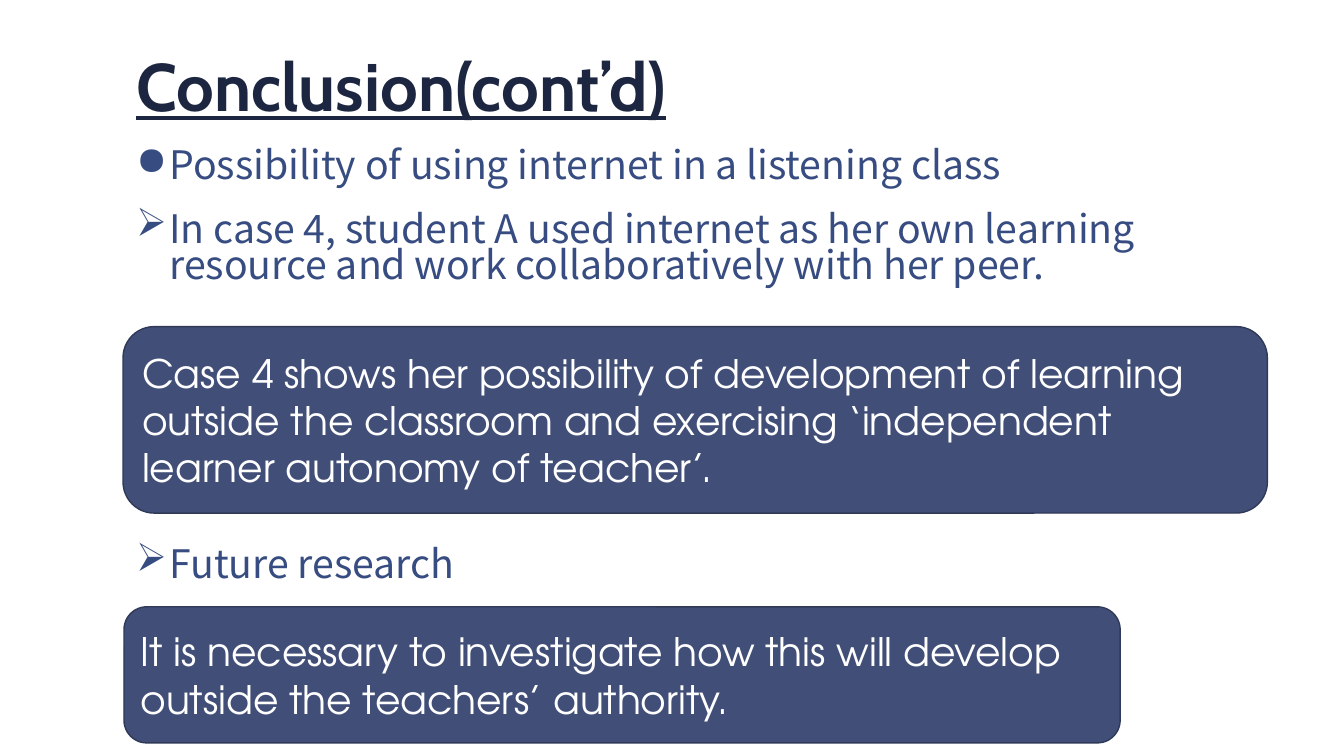
from lxml import etree
from pptx import Presentation
from pptx.dml.color import RGBColor
from pptx.enum import shapes, text
from pptx.oxml import ns
from pptx.util import Inches, Pt

COLORS = {"title": "1C2640", "body": "374C81", "panel": "414E77",
          "edge": "303A58", "white": "FFFFFF"}
TITLE_FONT, BODY_FONT, PANEL_FONT = "Cabin", "Noto Sans CJK JP", "TeX Gyre Adventor"
INDENT = Inches(0.33)


def color(name):
    return RGBColor.from_string(COLORS[name])


def write(par, words, face, tint, size=28, bold=False, under=False, lead=1.0, before=0):
    par.text = words
    par.alignment = text.PP_ALIGN.LEFT
    par.line_spacing = lead
    par.space_before = Pt(before)
    font = par.font
    font.name, font.size, font.bold, font.underline = face, Pt(size), bold, under
    font.color.rgb = color(tint)


def set_frame(frame, anchor):
    frame.word_wrap = True
    frame.auto_size = text.MSO_AUTO_SIZE.NONE
    frame.vertical_anchor = anchor
    frame.margin_left = frame.margin_right = Inches(0.13)
    frame.margin_top = frame.margin_bottom = Inches(0.07)


def add_mark(par, mark):
    """Give the paragraph a hanging bullet."""
    props = par._p.get_or_add_pPr()
    props.set("marL", str(INDENT))
    props.set("indent", str(-INDENT))
    etree.SubElement(props, ns.qn("a:buChar")).set("char", mark)


def add_title(slide, box, words):
    title = slide.shapes.title
    title.left, title.top, title.width, title.height = map(Inches, box)
    set_frame(title.text_frame, text.MSO_ANCHOR.BOTTOM)
    write(title.text_frame.paragraphs[0], words, TITLE_FONT, "title",
          size=48, bold=True, under=True, lead=0.85)


def add_list(slide, box, items):
    frame = slide.shapes.add_textbox(*map(Inches, box)).text_frame
    set_frame(frame, text.MSO_ANCHOR.TOP)
    for i, (mark, words) in enumerate(items):
        par = frame.add_paragraph() if i else frame.paragraphs[0]
        add_mark(par, mark)
        write(par, words, BODY_FONT, "body", lead=0.77, before=20 if i else 0)


def add_panel(slide, box, words):
    panel = slide.shapes.add_shape(shapes.MSO_SHAPE.ROUNDED_RECTANGLE, *map(Inches, box))
    panel.shadow.inherit = False
    panel.fill.solid()
    panel.fill.fore_color.rgb = color("panel")
    panel.line.color.rgb = color("edge")
    panel.line.width = Pt(1)
    frame = panel.text_frame
    frame.word_wrap = True
    frame.vertical_anchor = text.MSO_ANCHOR.MIDDLE
    write(frame.paragraphs[0], words, PANEL_FONT, "white")


def main():
    deck = Presentation()
    deck.slide_width, deck.slide_height = Inches(13.33), Inches(7.5)
    slide = deck.slides.add_slide(deck.slide_layouts[5])
    add_title(slide, (1.22, 0.13, 11.11, 1.18), "Conclusion(cont’d)")
    add_list(slide, (1.22, 1.42, 11.11, 1.75), [
        ("●", "Possibility of using internet in a listening class"),
        ("➢", "In case 4, student A used internet as her own learning "
              "resource and work collaboratively with her peer."),
    ])
    add_panel(slide, (1.22, 3.24, 11.35, 1.85),
              "Case 4 shows her possibility of development of learning outside the "
              "classroom and exercising ‘independent learner autonomy of teacher’.")
    add_list(slide, (1.22, 5.38, 11.11, 0.6), [("➢", "Future research")])
    add_panel(slide, (1.23, 6.02, 9.88, 1.35),
              "It is necessary to investigate how this will develop "
              "outside the teachers’ authority.")
    deck.save("out.pptx")


if __name__ == "__main__":
    main()
